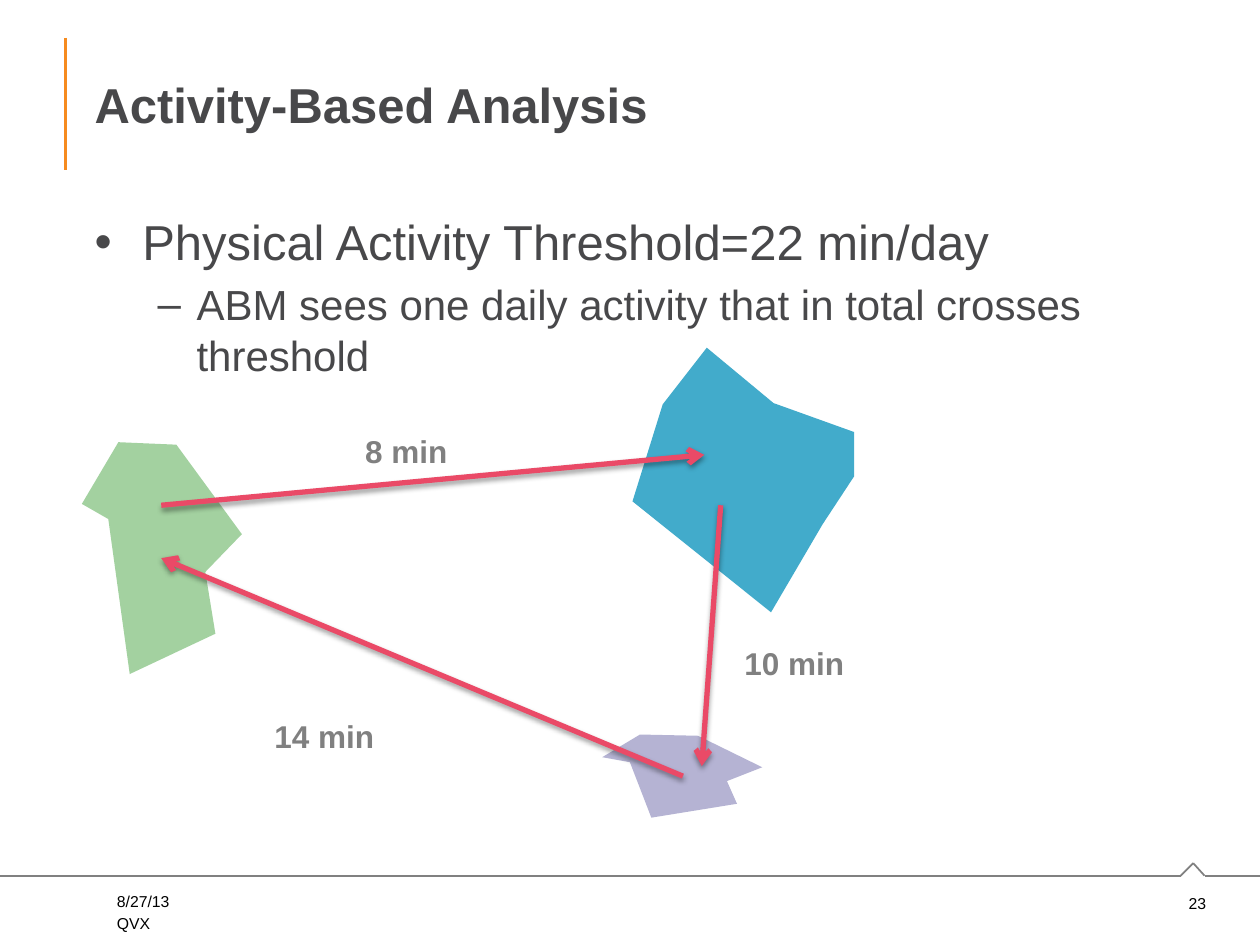
"""Build the Activity-Based Analysis slide with zones and walking trips."""
from lxml.etree import SubElement
from pptx import Presentation
from pptx.dml.color import RGBColor
from pptx.enum.shapes import MSO_CONNECTOR
from pptx.enum.text import MSO_ANCHOR, MSO_AUTO_SIZE, PP_ALIGN
from pptx.oxml import parse_xml
from pptx.oxml.ns import nsdecls, qn
from pptx.util import Inches, Pt

FONT = "Arial"
ORANGE = RGBColor(0xF6, 0x8B, 0x1F)
GRAY = RGBColor(0x80, 0x80, 0x80)
DARK = RGBColor(0x48, 0x48, 0x4A)
BLACK = RGBColor(0x00, 0x00, 0x00)
GREEN = RGBColor(0xA3, 0xD1, 0xA0)
BLUE = RGBColor(0x42, 0xAB, 0xCB)
PURPLE = RGBColor(0xB5, 0xB3, 0xD3)
RED = RGBColor(0xEA, 0x4A, 0x67)

presentation = Presentation()
presentation.slide_width = Inches(10)
presentation.slide_height = Inches(7.5)
slide = presentation.slides.add_slide(presentation.slide_layouts[1])


def add_line(start, end, color, width):
    connector = slide.shapes.add_connector(
        MSO_CONNECTOR.STRAIGHT, *map(Inches, start + end)
    )
    connector.line.color.rgb = color
    connector.line.width = Pt(width)
    effects = SubElement(connector._element.spPr, qn("a:effectLst"))
    return connector, effects


def format_text(paragraph, size, color, bold=False):
    for run in paragraph.runs:
        run.font.name = FONT
        run.font.size = Pt(size)
        run.font.bold = bold
        run.font.color.rgb = color


add_line((0.52, 0.3), (0.52, 1.35), ORANGE, 1.5)
footer_points = [(0, 6.95), (9.37, 6.95), (9.47, 6.85), (9.56, 6.95), (10, 6.95)]
for start, end in zip(footer_points, footer_points[1:]):
    add_line(start, end, GRAY, 1)

title = slide.shapes.title
title.left, title.top = Inches(0.65), Inches(0.3)
title.width, title.height = Inches(8.85), Inches(1.05)
title.text_frame.text = "Activity-Based Analysis"
title.text_frame.auto_size = MSO_AUTO_SIZE.NONE
title.text_frame.vertical_anchor = MSO_ANCHOR.MIDDLE
title.text_frame.paragraphs[0].alignment = PP_ALIGN.LEFT
format_text(title.text_frame.paragraphs[0], 28, DARK, True)

body = slide.placeholders[1]
body.left, body.top = Inches(0.65), Inches(1.57)
body.width, body.height = Inches(8.85), Inches(4.78)
body.text_frame.auto_size = MSO_AUTO_SIZE.NONE
body.text_frame.margin_top = Inches(0.11)
body.text_frame.text = (
    "Physical Activity Threshold=22 min/day\n"
    "ABM sees one daily activity that in total crosses threshold"
)
bullet_styles = [("•", 0.38, -0.38, 28, 0), ("–", 0.81, -0.31, 24, 4.8)]
for level, (paragraph, style) in enumerate(zip(body.text_frame.paragraphs, bullet_styles)):
    bullet, margin, indent, size, space = style
    paragraph.level = level
    paragraph.space_before = Pt(space)
    properties = paragraph._p.get_or_add_pPr()
    properties.set("marL", str(Inches(margin)))
    properties.set("indent", str(Inches(indent)))
    SubElement(properties, qn("a:buFont"), typeface=FONT)
    SubElement(properties, qn("a:buChar"), char=bullet)
    format_text(paragraph, size, DARK)

zones = [
    (PURPLE, [(4.78, 6.01), (5.08, 5.83), (5.54, 5.84), (6.05, 6.09),
              (5.77, 6.2), (5.85, 6.38), (5.17, 6.49), (5, 6.05)]),
    (GREEN, [(0.65, 4), (0.94, 3.51), (1.4, 3.53), (1.92, 4.24),
             (1.63, 4.54), (1.71, 5.03), (1.03, 5.35), (0.86, 4.12)]),
    (BLUE, [(5.26, 3.21), (5.61, 2.76), (6.14, 3.2), (6.78, 3.43),
            (6.78, 3.78), (6.53, 4.16), (6.12, 4.86), (5.02, 3.98)]),
]
for color, outline in zones:
    points = [(Inches(x), Inches(y)) for x, y in outline]
    builder = slide.shapes.build_freeform(*points[0])
    builder.add_line_segments(points[1:], close=True)
    zone = builder.convert_to_shape()
    zone.shadow.inherit = False
    zone.fill.solid()
    zone.fill.fore_color.rgb = color
    zone.line.fill.background()

trips = [
    ((1.28, 4.01), (5.59, 3.61)),
    ((5.72, 4.01), (5.57, 6.08)),
    ((5.42, 6.16), (1.28, 4.43)),
]
for start, end in trips:
    trip, effects = add_line(start, end, RED, 3)
    SubElement(trip.line._get_or_add_ln(), qn("a:tailEnd"), type="arrow")
    effects.append(parse_xml(
        f'<a:outerShdw {nsdecls("a")} blurRad="{Pt(3.1)}" dist="{Pt(1.6)}" '
        'dir="5400000" rotWithShape="0"><a:srgbClr val="000000">'
        '<a:alpha val="38000"/></a:srgbClr></a:outerShdw>'
    ))

labels = [
    ("8 min", 2.8, 3.38, 0.89, 0.4, 18, GRAY, True, PP_ALIGN.LEFT),
    ("10 min", 5.81, 5.06, 1.44, 0.4, 18, GRAY, True, PP_ALIGN.LEFT),
    ("14 min", 2.08, 5.64, 1.44, 0.4, 18, GRAY, True, PP_ALIGN.LEFT),
    ("8/27/13", 0.83, 7.03, 2.27, 0.25, 9, BLACK, False, PP_ALIGN.LEFT),
    ("QVX", 0.83, 7.2, 2.27, 0.25, 9, BLACK, False, PP_ALIGN.LEFT),
    ("23", 9.25, 7.04, 0.42, 0.25, 9, BLACK, False, PP_ALIGN.RIGHT),
]
for text, left, top, width, height, size, color, bold, alignment in labels:
    label = slide.shapes.add_textbox(*map(Inches, (left, top, width, height)))
    label.text_frame.word_wrap = True
    label.text_frame.auto_size = MSO_AUTO_SIZE.SHAPE_TO_FIT_TEXT
    label.text_frame.text = text
    paragraph = label.text_frame.paragraphs[0]
    paragraph.alignment = alignment
    format_text(paragraph, size, color, bold)

presentation.save("out.pptx")
